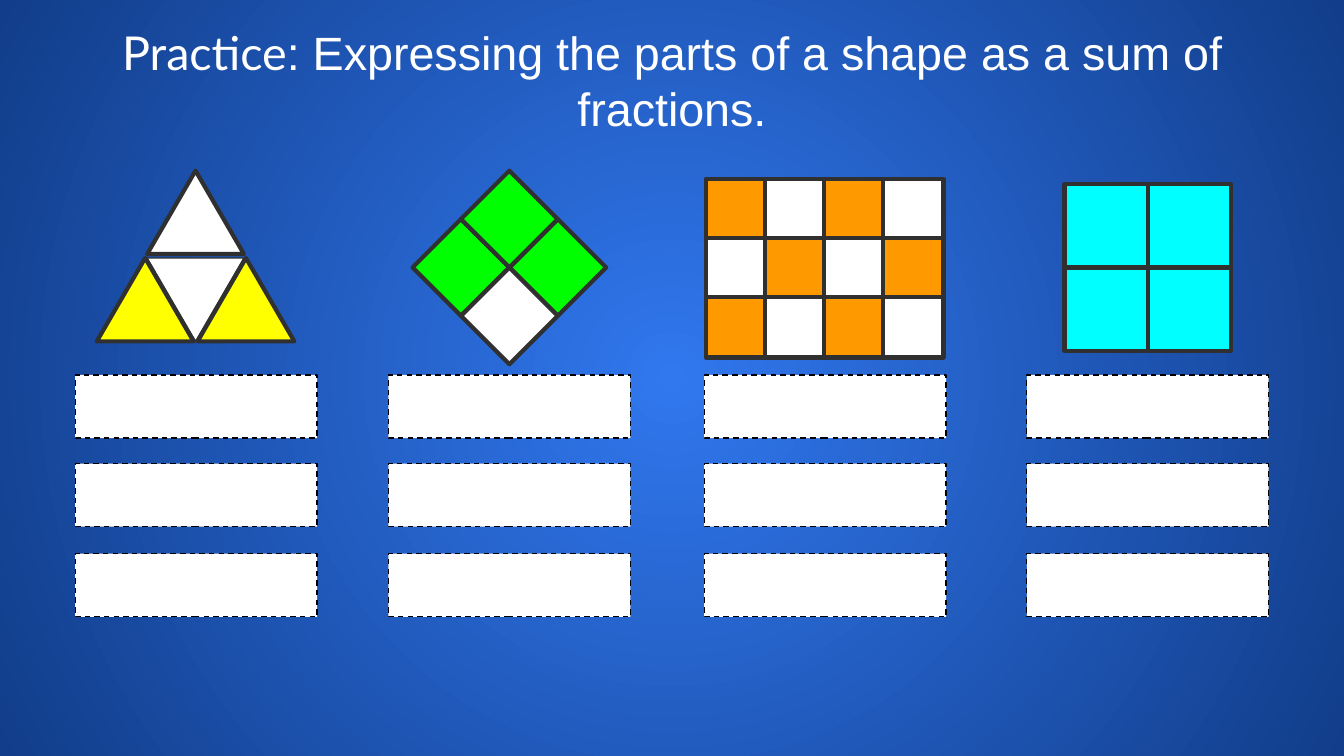
from dataclasses import dataclass
from itertools import product

from lxml import etree
from pptx import Presentation
from pptx import util as u
from pptx.dml.color import RGBColor
from pptx.enum import dml, shapes, text
from pptx.oxml.ns import qn


@dataclass(frozen=True)
class Theme:
    center: str = "3177EE"
    edge: str = "113D8A"
    white: str = "FFFFFF"
    outline: str = "303030"
    box_line: str = "000000"
    yellow: str = "FFFF00"
    green: str = "00FF00"
    orange: str = "FF9900"
    cyan: str = "00FFFF"
    title_size: float = 25
    thick: float = 2.25
    thin: float = 0.75


THEME = Theme()
SHAPE = shapes.MSO_SHAPE


def set_background(slide):
    """Fill the background with a gradient that spreads from the middle."""
    fill = slide.background.fill
    fill.gradient()
    for stop, position, color in zip(fill.gradient_stops, (0, 1), (THEME.center, THEME.edge)):
        stop.position = position
        stop.color.rgb = RGBColor.from_string(color)
    gradient = slide.element.find(".//" + qn("a:gradFill"))
    gradient.remove(gradient.find(qn("a:lin")))
    circle = etree.SubElement(gradient, qn("a:path"))
    circle.set("path", "circle")
    focus = etree.SubElement(circle, qn("a:fillToRect"))
    for side in "ltrb":
        focus.set(side, "50000")


def add_title(slide, parts):
    """Add the centred title from (text, font) parts."""
    box = slide.shapes.add_textbox(u.Inches(0.08), u.Inches(0.08), u.Inches(9.84), u.Inches(0.69))
    frame = box.text_frame
    frame.word_wrap = True
    frame.margin_left = frame.margin_right = u.Inches(0.1)
    frame.margin_top = frame.margin_bottom = u.Inches(0.1)
    paragraph = frame.paragraphs[0]
    paragraph.alignment = text.PP_ALIGN.CENTER
    for words, font in parts:
        run = paragraph.add_run()
        run.text = words
        run.font.name = font
        run.font.size = u.Pt(THEME.title_size)
        run.font.color.rgb = RGBColor.from_string(THEME.white)


def add_piece(parent, kind, left, top, width, height, fill,
              line=THEME.outline, weight=THEME.thick):
    shape = parent.shapes.add_shape(
        kind, u.Inches(left), u.Inches(top), u.Inches(width), u.Inches(height))
    shape.shadow.inherit = False
    shape.fill.solid()
    shape.fill.fore_color.rgb = RGBColor.from_string(fill)
    shape.line.color.rgb = RGBColor.from_string(line)
    shape.line.width = u.Pt(weight)
    return shape


def add_triangle(slide, left, top):
    """Add a large triangle made of four small ones."""
    group = slide.shapes.add_group_shape()
    width, height, step = 0.72, 0.62, 0.75 / 2
    base = top + 0.65
    middle = add_piece(group, SHAPE.ISOSCELES_TRIANGLE, left + step, base,
                       width, height, THEME.white, weight=THEME.thin)
    middle.rotation = 180
    corners = ((1, top, THEME.white), (0, base, THEME.yellow), (2, base, THEME.yellow))
    for steps, corner_top, fill in corners:
        add_piece(group, SHAPE.ISOSCELES_TRIANGLE, left + steps * step, corner_top,
                  width, height, fill)


def add_diamond(slide, left, top):
    """Add a large diamond made of four small ones."""
    group = slide.shapes.add_group_shape()
    size = 0.72
    pieces = ((0, 1, THEME.green), (2, 1, THEME.green), (1, 0, THEME.green), (1, 2, THEME.white))
    for column, row, fill in pieces:
        add_piece(group, SHAPE.DIAMOND, left + column * size / 2, top + row * size / 2,
                  size, size, fill)


def add_grid(slide, left, top, rows, columns, size, pitch, fills):
    """Add a grid of squares whose fills alternate like a checkerboard."""
    group = slide.shapes.add_group_shape()
    for row, column in product(range(rows), range(columns)):
        add_piece(group, SHAPE.RECTANGLE, left + column * pitch, top + row * pitch,
                  size, size, fills[(row + column) % len(fills)])


def add_answer_boxes(slide):
    for left, top in product((0.56, 2.89, 5.24, 7.64), (2.79, 3.45, 4.12)):
        box = add_piece(slide, SHAPE.RECTANGLE, left, top, 1.8, 0.47,
                        THEME.white, THEME.box_line, THEME.thin)
        box.line.dash_style = dml.MSO_LINE.DASH


def main():
    presentation = Presentation()
    presentation.slide_width = u.Inches(10)
    presentation.slide_height = u.Inches(10 * 9 / 16)
    slide = presentation.slides.add_slide(presentation.slide_layouts[6])
    set_background(slide)
    add_title(slide, (
        ("Practice", "Lato"),
        (": Expressing the parts of a shape as a sum of fractions.", "Arial"),
    ))
    add_triangle(slide, 0.72, 1.27)
    add_diamond(slide, 3.07, 1.27)
    add_grid(slide, 7.92, 1.37, 2, 2, 0.62, 0.62, (THEME.cyan,))
    add_grid(slide, 5.25, 1.33, 3, 4, 0.45, 0.44, (THEME.orange, THEME.white))
    add_answer_boxes(slide)
    presentation.save("out.pptx")


if __name__ == "__main__":
    main()
